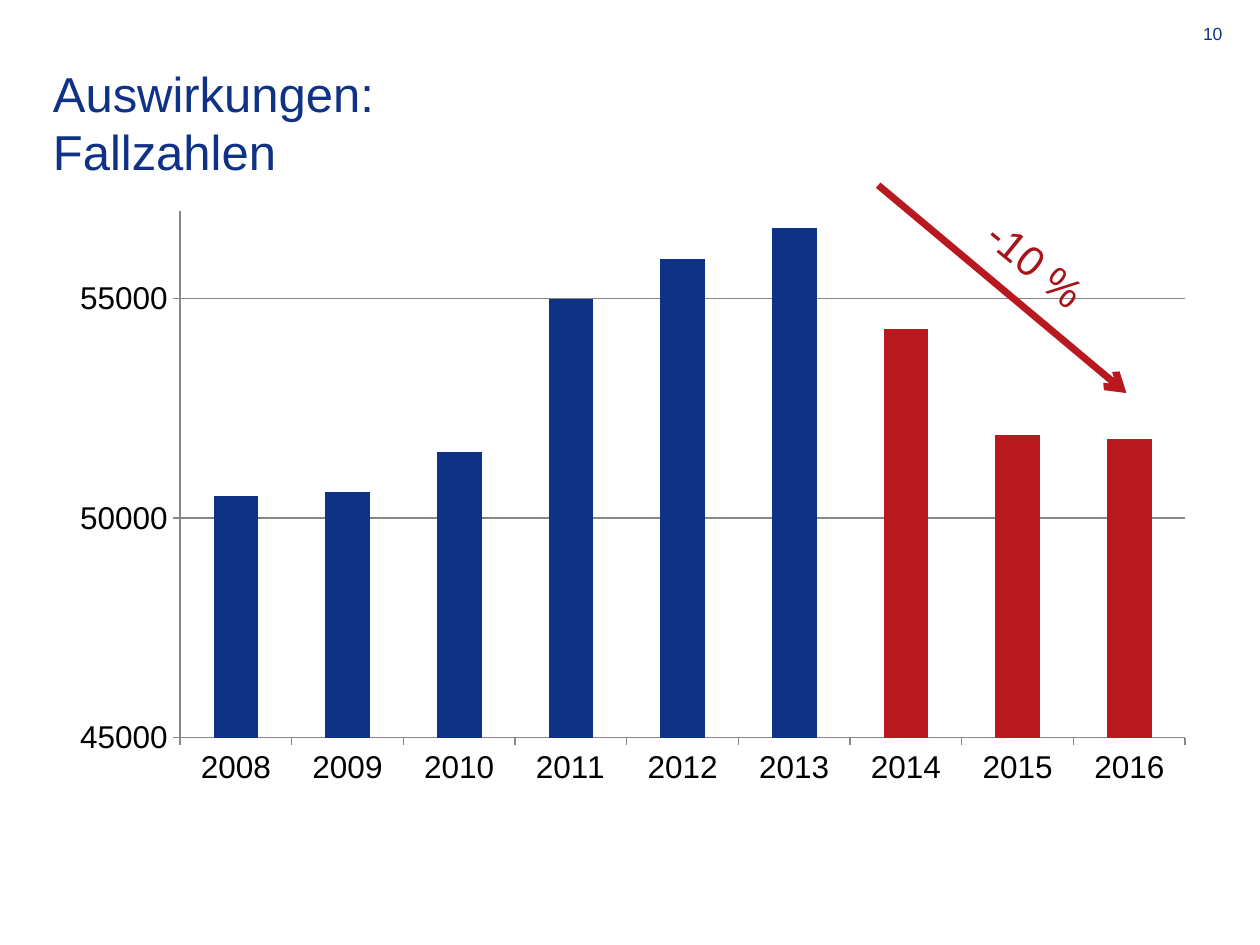
from dataclasses import dataclass

from lxml import etree
from pptx import Presentation
from pptx import util as u
from pptx.chart.data import CategoryChartData
from pptx.dml.color import RGBColor
from pptx.enum import chart as charts, shapes, text
from pptx.oxml import parse_xml
from pptx.oxml.ns import nsdecls, qn

COLORS = {"blue": "0F3286", "red": "B9181E", "dark_red": "A7151A",
          "black": "000000", "gray": "878787"}
FONT = "Arial"
CASES = {2008: 50500, 2009: 50600, 2010: 51500, 2011: 55000, 2012: 55900,
         2013: 56600, 2014: 54300, 2015: 51900, 2016: 51800}
FIRST_RED_YEAR = 2014


@dataclass
class Label:
    words: str
    left: float
    top: float
    width: float
    height: float
    size: int
    color: str
    margin: float = 0
    rotation: float = 0
    align: text.PP_ALIGN = text.PP_ALIGN.LEFT


def rgb(name: str) -> RGBColor:
    return RGBColor.from_string(COLORS[name])


def format_font(font, size: int, color: str) -> None:
    for name, value in {"name": FONT, "size": u.Pt(size), "bold": False}.items():
        setattr(font, name, value)
    font.color.rgb = rgb(color)


def fill_box(box, label: Label) -> None:
    placement = {"left": u.Inches(label.left), "top": u.Inches(label.top),
                 "width": u.Inches(label.width), "height": u.Inches(label.height),
                 "rotation": label.rotation}
    for name, value in placement.items():
        setattr(box, name, value)
    frame = box.text_frame
    settings = {"word_wrap": True, "auto_size": text.MSO_AUTO_SIZE.NONE,
                "vertical_anchor": text.MSO_ANCHOR.TOP,
                "margin_left": u.Inches(label.margin),
                "margin_right": u.Inches(label.margin),
                "margin_top": u.Inches(label.margin / 2),
                "margin_bottom": u.Inches(label.margin / 2)}
    for name, value in settings.items():
        setattr(frame, name, value)
    frame.text = label.words
    para = frame.paragraphs[0]
    para.alignment = label.align
    for span in para.runs:
        format_font(span.font, label.size, label.color)


def add_label(page, label: Label) -> None:
    fill_box(page.shapes.add_textbox(0, 0, 0, 0), label)


def add_case_chart(page) -> None:
    data = CategoryChartData(number_format="General")
    data.categories = [str(year) for year in CASES]
    data.add_series("Fallzahlen", list(CASES.values()))
    chart = page.shapes.add_chart(
        charts.XL_CHART_TYPE.COLUMN_CLUSTERED, u.Inches(0.42), u.Inches(1.58),
        u.Inches(9.17), u.Inches(4.75), data).chart
    chart.has_legend = False
    chart.has_title = False
    format_font(chart.font, 18, "black")

    # Columns, with the later years in red
    plot = chart.plots[0]
    plot.gap_width = 150
    plot.vary_by_categories = False
    series = plot.series[0]
    series.format.fill.solid()
    series.format.fill.fore_color.rgb = rgb("blue")
    for index, year in enumerate(CASES):
        if year >= FIRST_RED_YEAR:
            fill = series.points[index].format.fill
            fill.solid()
            fill.fore_color.rgb = rgb("red")

    # Axes and gridlines
    scale = {"minimum_scale": 45000, "maximum_scale": 57000, "major_unit": 5000,
             "has_major_gridlines": True}
    for name, value in scale.items():
        setattr(chart.value_axis, name, value)
    lines = [chart.value_axis.major_gridlines.format.line]
    for axis in (chart.category_axis, chart.value_axis):
        axis.major_tick_mark = charts.XL_TICK_MARK.OUTSIDE
        axis.minor_tick_mark = charts.XL_TICK_MARK.NONE
        lines.append(axis.format.line)
    for line in lines:
        line.color.rgb = rgb("gray")
        line.width = u.Pt(0.75)

    # Inner plot area as shares of the chart
    area = chart.plots[0]._element.getparent()
    for old in area.findall(qn("c:layout")):
        area.remove(old)
    shares = {"x": 0.11, "y": 0.02, "w": 0.87, "h": 0.88}
    modes = "".join(f'<c:{side}Mode val="edge"/>' for side in "xy")
    values = "".join(f'<c:{key} val="{share}"/>' for key, share in shares.items())
    area.insert(0, parse_xml(
        f'<c:layout {nsdecls("c")}><c:manualLayout><c:layoutTarget val="inner"/>'
        f'{modes}{values}</c:manualLayout></c:layout>'))


def add_trend_arrow(page) -> None:
    arrow = page.shapes.add_connector(
        shapes.MSO_CONNECTOR.STRAIGHT, u.Inches(6.97), u.Inches(1.47),
        u.Inches(8.94), u.Inches(3.12))
    arrow.line.color.rgb = rgb("red")
    arrow.line.width = u.Pt(4)
    etree.SubElement(arrow.line._get_or_add_ln(), qn("a:tailEnd"), type="arrow")
    etree.SubElement(arrow._element.spPr, qn("a:effectLst"))


def main() -> None:
    deck = Presentation()
    deck.slide_width, deck.slide_height = u.Inches(10), u.Inches(7.5)
    page = deck.slides.add_slide(deck.slide_layouts[5])

    # Page number and title
    add_label(page, Label("10", 7.44, 0.18, 4.37, 0.17, 10, "blue",
                          align=text.PP_ALIGN.CENTER))
    fill_box(page.shapes.title, Label("Auswirkungen: \vFallzahlen",
                                      0.42, 0.5, 9.17, 0.93, 28, "blue"))

    # Chart with the decline marked on it
    add_case_chart(page)
    add_trend_arrow(page)
    add_label(page, Label("-10 %", 7.69, 1.85, 1.1, 0.5, 24, "dark_red",
                          margin=0.1, rotation=39.2))
    deck.save("out.pptx")


if __name__ == "__main__":
    main()
